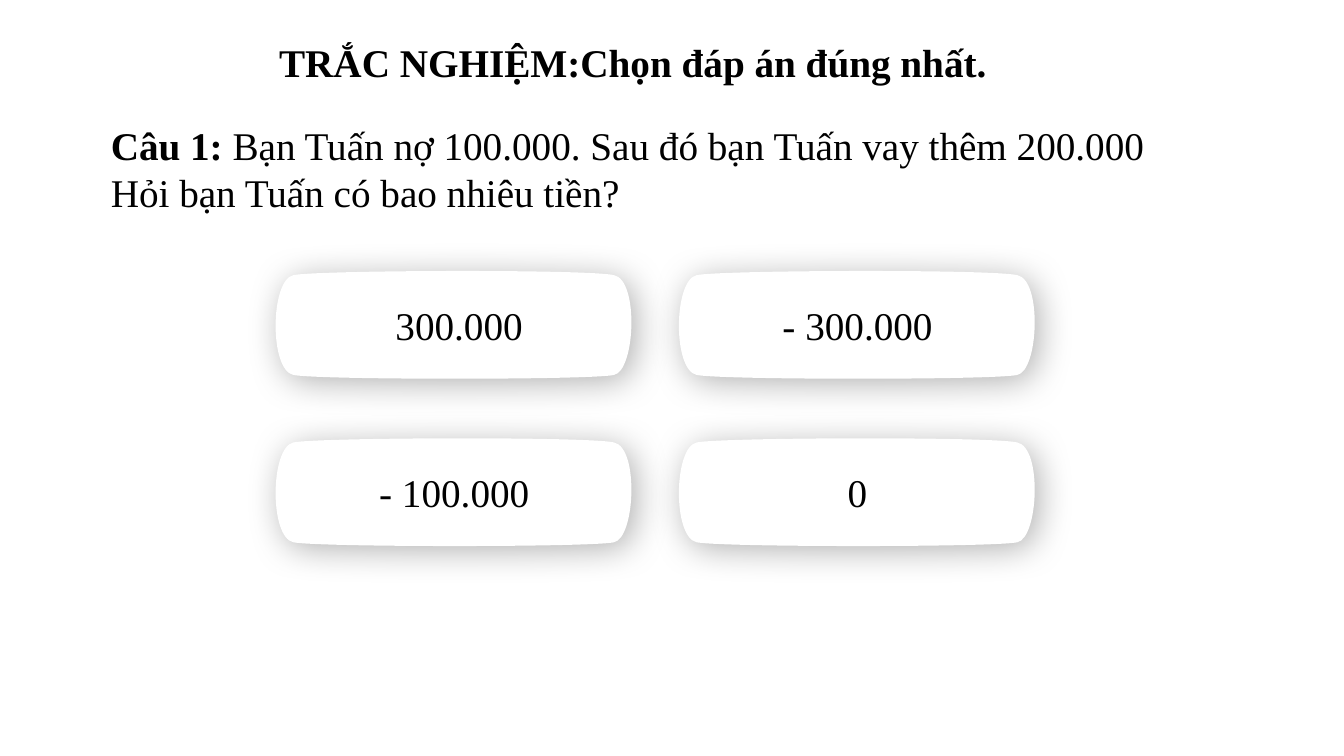
from dataclasses import dataclass

from lxml import etree
from pptx import Presentation
from pptx.dml.color import RGBColor
from pptx.enum import text
from pptx.oxml import ns
from pptx.util import Inches, Pt


@dataclass(frozen=True)
class Theme:
    font: str = "Times New Roman"
    size: int = 28
    ink: str = "000000"
    card: str = "FFFFFF"
    shadow_alpha: int = 30
    shadow_blur: int = 25
    shadow_distance: int = 5
    shadow_angle: int = 45


THEME = Theme()
CARD_SIZE = (3.67, 1.1)
CARD_CURVE = [
    (3.42, 0.06),
    (3.67, 0.11), (3.63, 1.01), (3.42, 1.05),
    (3.21, 1.1), (0.48, 1.1), (0.24, 1.05),
    (0, 1), (0.01, 0.11), (0.24, 0.06),
    (0.47, 0.01), (3.17, 0), (3.42, 0.06),
]
ANSWERS = [[" 300.000", "- 300.000"], ["- 100.000", "0"]]


def style_run(run, bold=False):
    run.font.name = THEME.font
    run.font.size = Pt(THEME.size)
    run.font.bold = bold
    run.font.color.rgb = RGBColor.from_string(THEME.ink)


def add_text(slide, box, lines):
    shape = slide.shapes.add_textbox(*map(Inches, box))
    frame = shape.text_frame
    frame.word_wrap = True
    frame.auto_size = text.MSO_AUTO_SIZE.SHAPE_TO_FIT_TEXT
    for index, line in enumerate(lines):
        paragraph = frame.add_paragraph() if index else frame.paragraphs[0]
        for words, bold in line:
            run = paragraph.add_run()
            run.text = words
            style_run(run, bold)


def curve_outline(shape):
    path = next(shape.element.iter(ns.qn("a:path")))
    lines = path.findall(ns.qn("a:lnTo"))
    for start in range(0, len(lines), 3):
        group = lines[start:start + 3]
        curve = etree.Element(ns.qn("a:cubicBezTo"))
        group[0].addprevious(curve)
        for line in group:
            curve.append(line[0])
            path.remove(line)


def add_shadow(shape):
    shape.shadow.inherit = False
    effects = shape.element.spPr.find(ns.qn("a:effectLst"))
    shadow = etree.SubElement(
        effects, ns.qn("a:outerShdw"),
        blurRad=str(Pt(THEME.shadow_blur)), dist=str(Pt(THEME.shadow_distance)),
        dir=str(THEME.shadow_angle * 60000), algn="ctr", rotWithShape="0")
    color = etree.SubElement(shadow, ns.qn("a:srgbClr"), val=THEME.ink)
    etree.SubElement(color, ns.qn("a:alpha"), val=str(THEME.shadow_alpha * 1000))


def add_card(slide, left, top, answer):
    points = [(Inches(left + x), Inches(top + y)) for x, y in CARD_CURVE]
    builder = slide.shapes.build_freeform(*points[0])
    builder.add_line_segments(points[1:], close=True)
    shape = builder.convert_to_shape()
    curve_outline(shape)
    shape.fill.solid()
    shape.fill.fore_color.rgb = RGBColor.from_string(THEME.card)
    shape.line.fill.background()
    add_shadow(shape)
    frame = shape.text_frame
    frame.text = answer
    frame.word_wrap = True
    frame.vertical_anchor = text.MSO_ANCHOR.MIDDLE
    paragraph = frame.paragraphs[0]
    paragraph.alignment = text.PP_ALIGN.CENTER
    style_run(paragraph.runs[0])


def add_answers(slide, box):
    left, top, width, height = box
    card_width, card_height = CARD_SIZE
    for row, answers in enumerate(ANSWERS):
        for column, answer in enumerate(answers):
            add_card(slide, left + column * (width - card_width),
                     top + row * (height - card_height), answer)


def main():
    presentation = Presentation()
    presentation.slide_width = Inches(13.33)
    presentation.slide_height = Inches(7.5)
    slide = presentation.slides.add_slide(presentation.slide_layouts[6])
    add_text(slide, (1, 1.15, 11.92, 1.04), [
        [("Câu 1: ", True),
         ("Bạn Tuấn nợ 100.000. Sau đó bạn Tuấn vay thêm 200.000", False)],
        [("Hỏi bạn Tuấn có bao nhiêu tiền?", False)],
    ])
    add_answers(slide, (2.67, 2.67, 7.67, 2.76))
    add_text(slide, (2.67, 0.33, 7.26, 0.57),
             [[("TRẮC NGHIỆM:Chọn đáp án đúng nhất.", True)]])
    presentation.save("out.pptx")


if __name__ == "__main__":
    main()
